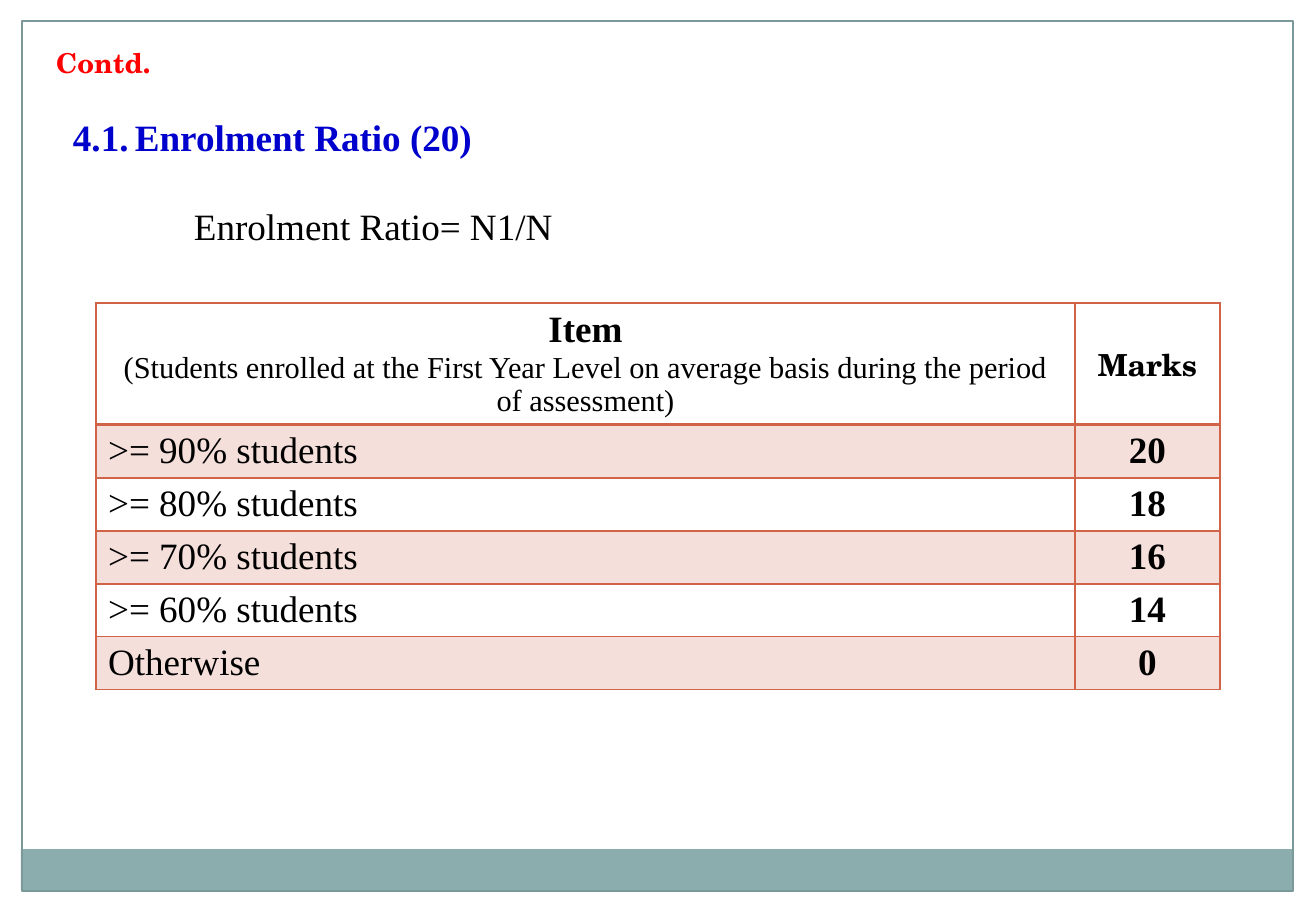
import pptx
import pptx.dml.color
import pptx.enum.shapes
import pptx.enum.text
import pptx.oxml
import pptx.oxml.ns
import pptx.util

PX = 914400 / 121.5
SERIF, SCHOOLBOOK = "Times New Roman", "TeX Gyre Schola"
RUST, BAND = "D16349", "F5DFDB"
ALIGN = pptx.enum.text.PP_ALIGN
ANCHOR = pptx.enum.text.MSO_ANCHOR

TITLE = "Contd."
HEADING = "4.1.\tEnrolment Ratio (20)"
FORMULA = "Enrolment Ratio= N1/N"
ITEM = "Item"
ITEM_NOTE = ("(Students enrolled at the First Year Level on average basis "
             "during the period of assessment)")
MARKS = [
    (">= 90% students", "20"),
    (">= 80% students", "18"),
    (">= 70% students", "16"),
    (">= 60% students", "14"),
    ("Otherwise", "0"),
]
SLIDE_WIDTH, SLIDE_HEIGHT = 1316, 911
MARGIN = 21
MARGIN_STRIPS = [
    (0, 0, SLIDE_WIDTH, MARGIN),
    (SLIDE_WIDTH - MARGIN, 0, MARGIN, SLIDE_HEIGHT),
    (0, 0, MARGIN, SLIDE_HEIGHT),
]
COLUMN_WIDTHS = (979, 145)
HEADER_HEIGHT, ROW_HEIGHT = 122, 53


def px(length):
    return pptx.util.Emu(round(length * PX))


def box(left, top, width, height):
    return px(left), px(top), px(width), px(height)


def rgb(value):
    return pptx.dml.color.RGBColor.from_string(value)


def write(paragraph, text, font=SERIF, size=22, bold=False, color="000000",
          align=ALIGN.LEFT, indent=0, hanging=0, before=0):
    run = paragraph.add_run()
    run.text = text
    run.font.name, run.font.size, run.font.bold = font, pptx.util.Pt(size), bold
    run.font.color.rgb = rgb(color)
    paragraph.alignment = align
    paragraph.space_before = pptx.util.Pt(before)
    properties = paragraph._p.get_or_add_pPr()
    properties.set("marL", str(px(indent)))
    properties.set("indent", str(-px(hanging)))


def add_rectangle(slide, bounds, fill=None, line=None):
    shape = slide.shapes.add_shape(pptx.enum.shapes.MSO_SHAPE.RECTANGLE, *bounds)
    shape.shadow.inherit = False
    if fill:
        shape.fill.solid()
        shape.fill.fore_color.rgb = rgb(fill)
    else:
        shape.fill.background()
    if line:
        shape.line.color.rgb = rgb(line)
        shape.line.width = pptx.util.Pt(0.75)
    else:
        shape.line.fill.background()


def format_cell(cell, fill, top, bottom):
    """Set fill, margins and borders; top and bottom are border widths in points."""
    cell.vertical_anchor = ANCHOR.MIDDLE
    cell.margin_top = cell.margin_bottom = px(4)
    properties = cell._tc.get_or_add_tcPr()
    for side, width in (("L", 1), ("R", 1), ("T", top), ("B", bottom)):
        properties.append(pptx.oxml.parse_xml(
            f'<a:ln{side} {pptx.oxml.ns.nsdecls("a")} w="{pptx.util.Pt(width)}">'
            f'<a:solidFill><a:srgbClr val="{RUST}"/></a:solidFill></a:ln{side}>'))
    if fill:
        cell.fill.solid()
        cell.fill.fore_color.rgb = rgb(fill)
    else:
        cell.fill.background()


def add_marks_table(slide):
    heights = [HEADER_HEIGHT] + [ROW_HEIGHT] * len(MARKS)
    bounds = box(96, 303, sum(COLUMN_WIDTHS), sum(heights))
    table = slide.shapes.add_table(len(heights), len(COLUMN_WIDTHS), *bounds).table
    table.first_row = table.horz_banding = False
    for column, width in zip(table.columns, COLUMN_WIDTHS):
        column.width = px(width)
    for index, (row, height) in enumerate(zip(table.rows, heights)):
        row.height = px(height)
        for cell in row.cells:
            format_cell(cell, BAND if index % 2 else None,
                        top=2 if index == 1 else 1, bottom=2 if index == 0 else 1)

    item_frame = table.cell(0, 0).text_frame
    write(item_frame.paragraphs[0], ITEM, bold=True, align=ALIGN.CENTER)
    write(item_frame.add_paragraph(), ITEM_NOTE, size=18, align=ALIGN.CENTER)
    write(table.cell(0, 1).text_frame.paragraphs[0], "Marks", font=SCHOOLBOOK,
          size=18, bold=True, align=ALIGN.CENTER)
    for index, (item, marks) in enumerate(MARKS, start=1):
        write(table.cell(index, 0).text_frame.paragraphs[0], item, align=ALIGN.JUSTIFY)
        write(table.cell(index, 1).text_frame.paragraphs[0], marks, bold=True,
              align=ALIGN.CENTER)


def main():
    presentation = pptx.Presentation()
    presentation.slide_width, presentation.slide_height = px(SLIDE_WIDTH), px(SLIDE_HEIGHT)
    slide = presentation.slides.add_slide(presentation.slide_layouts[5])

    for strip in MARGIN_STRIPS:
        add_rectangle(slide, box(*strip), fill="FFFFFF")
    add_rectangle(slide, box(21, 849, 1271, 41), fill="8CADAE")
    add_rectangle(slide, box(22, 21, 1271, 870), line="7C999A")
    add_marks_table(slide)

    text_box = slide.shapes.add_textbox(*box(61, 108, 1194, 147))
    frame = text_box.text_frame
    frame.word_wrap = True
    write(frame.paragraphs[0], HEADING, bold=True, color="0000CC",
          indent=62, hanging=62)
    write(frame.add_paragraph(), FORMULA, indent=121, before=26.3)

    title = slide.shapes.title
    title.left, title.top, title.width, title.height = box(44, 40, 1228, 40)
    title.text_frame.vertical_anchor = ANCHOR.TOP
    write(title.text_frame.paragraphs[0], TITLE, font=SCHOOLBOOK, size=16.2,
          bold=True, color="FF0000")

    presentation.save("out.pptx")


if __name__ == "__main__":
    main()
